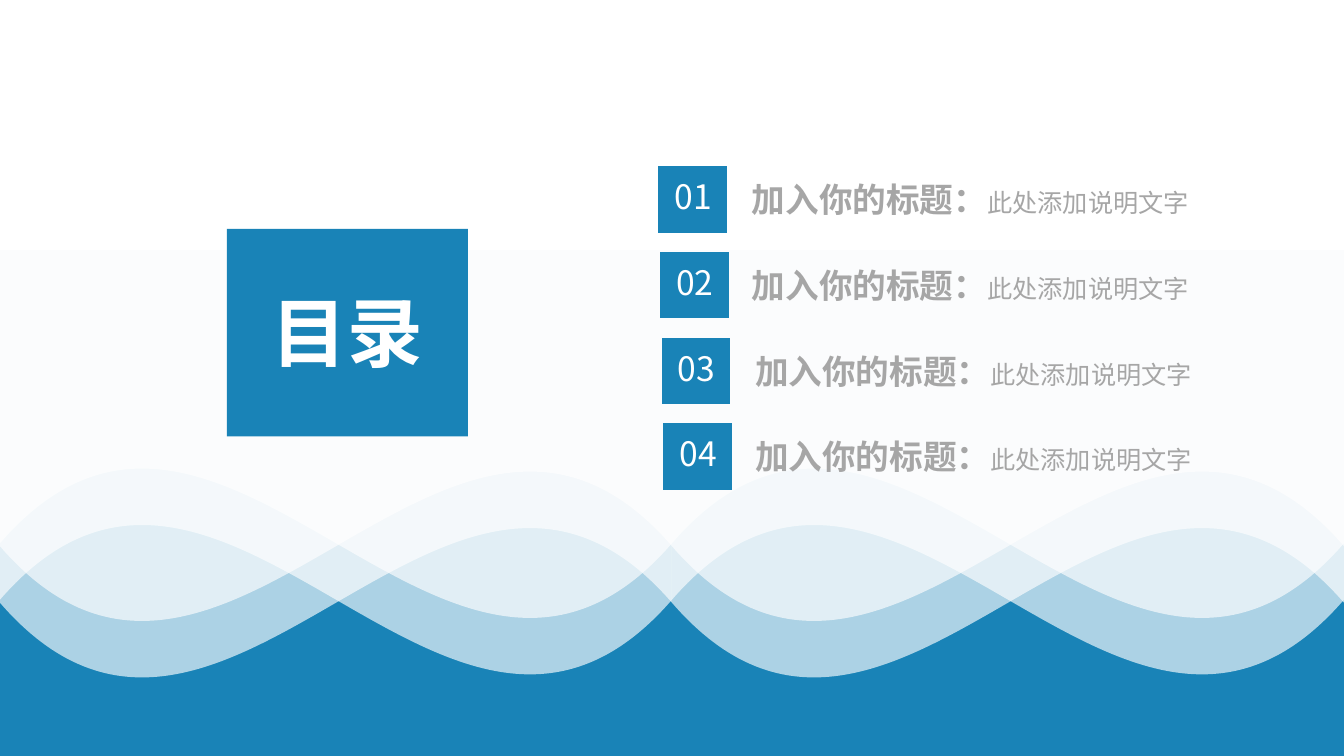
"""Build a contents slide with four numbered entries above layered waves."""
from itertools import product

from lxml.etree import SubElement
from pptx import Presentation
from pptx.dml.color import RGBColor as Rgb
from pptx.enum.shapes import MSO_SHAPE as Kind
from pptx.enum.text import MSO_ANCHOR as Anchor, MSO_AUTO_SIZE as Auto, PP_ALIGN as Align
from pptx.oxml.ns import qn
from pptx.util import Inches, Pt

TITLE = "目录"
ENTRIES = [("加入你的标题：", "此处添加说明文字")] * 4
COLORS = {"blue": "1983B7", "white": "FFFFFF", "gray": "A6A6A6"}
FONT = "Noto Sans CJK SC"
WIDE, HIGH = 13.33, 7.5
HALF = WIDE / 2
WAVE_H = 6.16
WAVE_TOPS = (0.56, 0)
FLIP_DROP = 0.03
ALPHA = 64
ROW_TOP, ROW_STEP = 1.65, 0.85
BOX_LEFT, BOX_SHIFT = 6.53, 0.05 / 3
BOX_W, BOX_H = 0.68, 0.66
ENTRY_LEFTS = (7.36, 7.36, 7.39, 7.39)


def paint(fill, color):
    fill.solid()
    fill.fore_color.rgb = Rgb.from_string(COLORS[color])


def block(slide, kind, place, color):
    shape = slide.shapes.add_shape(kind, *map(Inches, place))
    shape.shadow.inherit = False
    paint(shape.fill, color)
    shape.line.fill.background()
    return shape


def wave(slide, left, top, flip):
    shape = block(slide, Kind.WAVE, (left, top + flip * FLIP_DROP, HALF, WAVE_H), "white")
    props = shape.element.spPr
    if flip:
        props.xfrm.set("flipH", "1")
    tint = props.find(qn("a:solidFill"))[0]
    SubElement(tint, qn("a:alpha")).set("val", str(ALPHA * 1000))


def write(box, *parts, color="white", align=Align.LEFT):
    frame = box.text_frame
    frame.word_wrap = True
    frame.auto_size = Auto.SHAPE_TO_FIT_TEXT
    frame.vertical_anchor = Anchor.TOP
    para = frame.paragraphs[0]
    para.alignment = align
    for text, size, bold in parts:
        run = para.add_run()
        run.text = text
        font = run.font
        font.name, font.size, font.bold = FONT, Pt(size), bold
        paint(font.fill, color)
        SubElement(run._r.get_or_add_rPr(), qn("a:ea")).set("typeface", FONT)


def label(slide, place, *parts, **style):
    write(slide.shapes.add_textbox(*map(Inches, place)), *parts, **style)


def main():
    deck = Presentation()
    deck.slide_width, deck.slide_height = Inches(WIDE), Inches(HIGH)
    slide = deck.slides.add_slide(deck.slide_layouts[5])
    paint(slide.background.fill, "blue")

    block(slide, Kind.RECTANGLE, (0, 0, WIDE, 2.48), "white")
    for top, left, flip in product(WAVE_TOPS, (0, HALF), (False, True)):
        wave(slide, left, top, flip)

    for row, (head, note) in enumerate(ENTRIES):
        top = ROW_TOP + row * ROW_STEP
        left = BOX_LEFT + row * BOX_SHIFT
        label(slide, (ENTRY_LEFTS[row], top + 0.08, 5.5, 0.5),
              (head, 24, True), (note, 18, False), color="gray")
        box = block(slide, Kind.PARALLELOGRAM, (left, top, BOX_W, BOX_H), "blue")
        box.adjustments[0] = 0
        label(slide, (left + 0.02, top + 0.05, 0.65, 0.5),
              (f"{row + 1:02}", 24, False), align=Align.CENTER)

    block(slide, Kind.RECTANGLE, (2.25, 2.27, 2.39, 2.06), "blue")
    title = slide.shapes.title
    title.left, title.top, title.width, title.height = map(Inches, (2.38, 2.79, 2.13, 1.01))
    write(title, (TITLE, 54, True), align=Align.CENTER)
    slide.shapes.element.append(title.element)
    deck.save("out.pptx")


if __name__ == "__main__":
    main()
